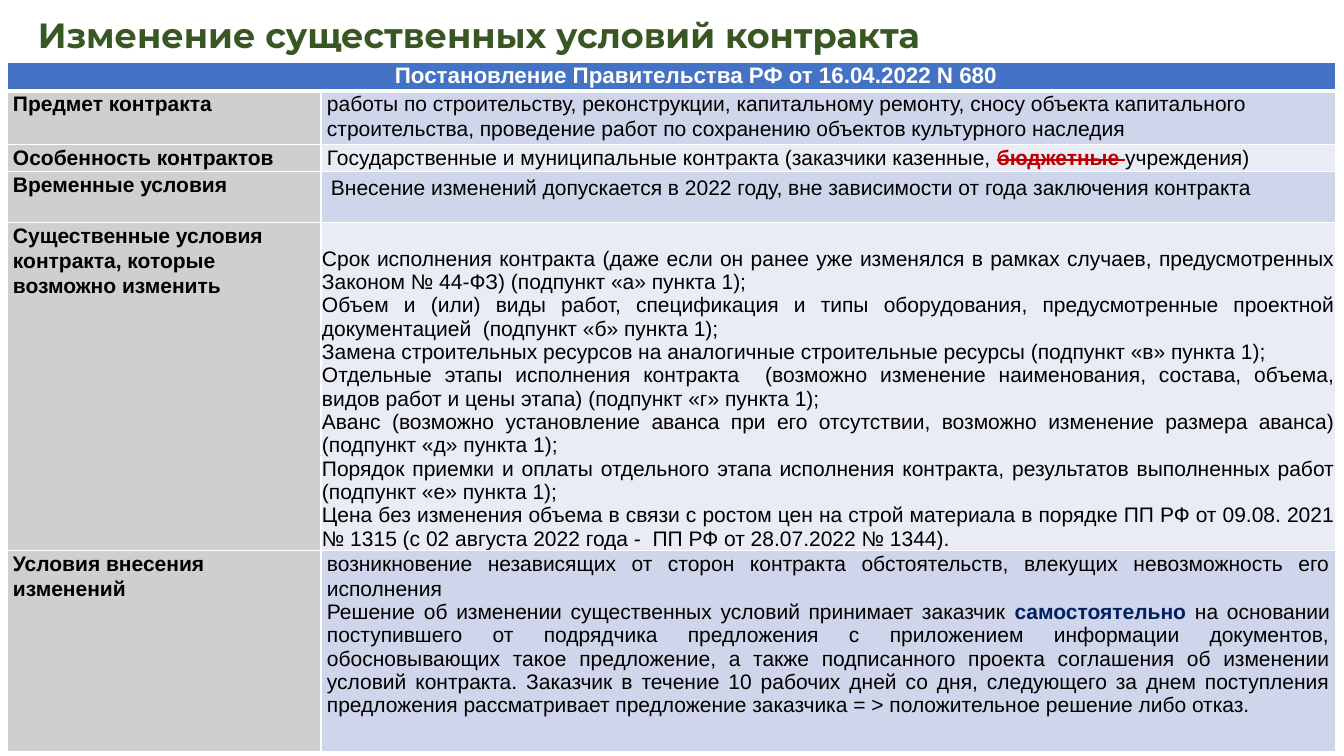
"""Builds the slide on changing the essential terms of a contract."""
from lxml import etree
from pptx import Presentation
from pptx import util as u
from pptx.dml.color import RGBColor
from pptx.enum import text
from pptx.oxml.ns import qn

EMU_PER_PX = 9071
COLORS = {
    "title": "385723", "header": "4472C4", "label": "D0CECE", "dark_band": "CFD5EA",
    "light_band": "E9EBF5", "white": "FFFFFF", "black": "000000", "red": "C00000", "navy": "002060",
}
ALIGN = text.PP_ALIGN
LOOSE = 1.07
COLUMNS = [314, 1015]
HEADER = "Постановление Правительства РФ от 16.04.2022 N 680"
HEADER_HEIGHT = 29

SUBJECT = [
    "работы по строительству, реконструкции, капитальному ремонту, сносу объекта капитального "
    "строительства, проведение работ по сохранению объектов культурного наследия",
]
FEATURES = [
    [("Государственные и муниципальные контракта (заказчики казенные, ", {}),
     ("бюджетные ", {"color": "red", "bold": True, "strike": True}),
     ("учреждения)", {})],
]
TIMING = ["Внесение изменений допускается в 2022 году, вне зависимости от года заключения контракта"]
TERMS = [
    "Срок исполнения контракта (даже если он ранее уже изменялся в рамках случаев, "
    "предусмотренных Законом № 44-ФЗ) (подпункт «а» пункта 1);",
    "Объем и (или) виды работ, спецификация и типы оборудования, предусмотренные проектной "
    "документацией  (подпункт «б» пункта 1);",
    "Замена строительных ресурсов на аналогичные строительные ресурсы (подпункт «в» пункта 1);",
    "Отдельные этапы исполнения контракта  (возможно изменение наименования, состава, объема, "
    "видов работ и цены этапа) (подпункт «г» пункта 1);",
    "Аванс (возможно установление аванса при его отсутствии, возможно изменение размера аванса) "
    "(подпункт «д» пункта 1);",
    "Порядок приемки и оплаты отдельного этапа исполнения контракта, результатов выполненных "
    "работ (подпункт «е» пункта 1);",
    "Цена без изменения объема в связи с ростом цен на строй материала в порядке ПП РФ от "
    "09.08. 2021 № 1315 (с 02 августа 2022 года -  ПП РФ от 28.07.2022 № 1344).",
]
PROCEDURE = [
    "возникновение независящих от сторон контракта обстоятельств, влекущих невозможность его исполнения",
    [("Решение об изменении существенных условий принимает заказчик ", {}),
     ("самостоятельно", {"color": "navy", "bold": True}),
     (" на основании поступившего от подрядчика предложения с приложением информации документов, "
      "обосновывающих такое предложение, а также подписанного проекта соглашения об изменении "
      "условий контракта. Заказчик в течение 10 рабочих дней со дня, следующего за днем "
      "поступления предложения рассматривает предложение заказчика = > положительное решение "
      "либо отказ.", {})],
]
ROWS = [
    ("Предмет контракта", 53, SUBJECT, {"spacings": [LOOSE]}),
    ("Особенность контрактов", 27, FEATURES, {"spacings": [LOOSE]}),
    ("Временные условия", 51, TIMING, {"align": ALIGN.JUSTIFY, "indent": 9, "side": 1, "top": 5}),
    ("Существенные условия контракта, которые возможно изменить", 327, TERMS,
     {"align": ALIGN.JUSTIFY, "side": 1, "anchor": text.MSO_ANCHOR.BOTTOM}),
    ("Условия внесения изменений", 201, PROCEDURE,
     {"align": ALIGN.JUSTIFY, "spacings": [LOOSE, 1.0]}),
]


def px(length):
    """Turn pixels into EMU."""
    return u.Emu(length * EMU_PER_PX)


def rgb(name):
    """Look up a named colour."""
    return RGBColor.from_string(COLORS[name])


def add_span(para, words, size, color="black", bold=False, strike=False, font="Arial"):
    """Add one formatted run to a paragraph."""
    span = para.add_run()
    span.text = words
    span.font.size = u.Pt(size)
    span.font.name = font
    span.font.bold = bold
    span.font.color.rgb = rgb(color)
    if strike:
        span.font._element.set("strike", "sngStrike")


def set_borders(cell, bottom=1):
    """Draw white lines on the four sides of a cell."""
    properties = cell._tc.get_or_add_tcPr()
    for side, width in (("L", 1), ("R", 1), ("T", 1), ("B", bottom)):
        line = etree.SubElement(properties, qn(f"a:ln{side}"), w=str(u.Pt(width)))
        fill = etree.SubElement(line, qn("a:solidFill"))
        etree.SubElement(fill, qn("a:srgbClr"), val=COLORS["white"])


def fill_cell(cell, paragraphs, fill, size=15, color="black", bold=False, align=ALIGN.LEFT,
              indent=0, side=6, top=0, anchor=text.MSO_ANCHOR.TOP, spacings=(1.0,), bottom=1):
    """Style a cell and write its paragraphs."""
    set_borders(cell, bottom)
    cell.fill.solid()
    cell.fill.fore_color.rgb = rgb(fill)
    cell.margin_left = cell.margin_right = px(side)
    cell.margin_top, cell.margin_bottom = px(top), 0
    cell.vertical_anchor = anchor
    for index, content in enumerate(paragraphs):
        para = cell.text_frame.add_paragraph() if index else cell.text_frame.paragraphs[0]
        para.alignment = align
        para.line_spacing = spacings[min(index, len(spacings) - 1)]
        if indent:
            para._p.get_or_add_pPr().set("indent", str(px(indent)))
        spans = [(content, {})] if isinstance(content, str) else content
        for words, style in spans:
            add_span(para, words, size, **{"color": color, "bold": bold, **style})


def add_title(page, left, top, width, height):
    """Place the slide title."""
    box = page.shapes.add_textbox(px(left), px(top), px(width), px(height))
    box.text_frame.word_wrap = False
    add_span(box.text_frame.paragraphs[0], "Изменение существенных условий контракта",
             25, "title", True, font="Montserrat")


def add_terms_table(page, left, top):
    """Place the table of contract terms."""
    heights = [HEADER_HEIGHT] + [row[1] for row in ROWS]
    frame = page.shapes.add_table(len(heights), len(COLUMNS), px(left), px(top),
                                  px(sum(COLUMNS)), px(sum(heights)))
    table = frame.table
    for column, width in zip(table.columns, COLUMNS):
        column.width = px(width)
    for row, height in zip(table.rows, heights):
        row.height = px(height)
    table.cell(0, 0).merge(table.cell(0, 1))
    fill_cell(table.cell(0, 0), [HEADER], "header", 16, "white", True, ALIGN.CENTER,
              indent=49, spacings=[LOOSE], bottom=3)
    set_borders(table.cell(0, 1), 3)
    for number, (label, _, paragraphs, style) in enumerate(ROWS, 1):
        fill_cell(table.cell(number, 0), [label], "label", bold=True, spacings=[LOOSE])
        band = "dark_band" if number % 2 else "light_band"
        fill_cell(table.cell(number, 1), paragraphs, band, **style)


def main():
    """Build and save the deck."""
    deck = Presentation()
    deck.slide_width, deck.slide_height = px(1344), px(756)
    page = deck.slides.add_slide(deck.slide_layouts[6])
    add_title(page, 28, 9, 947, 52)
    add_terms_table(page, 7, 62)
    deck.save("out.pptx")


if __name__ == "__main__":
    main()
